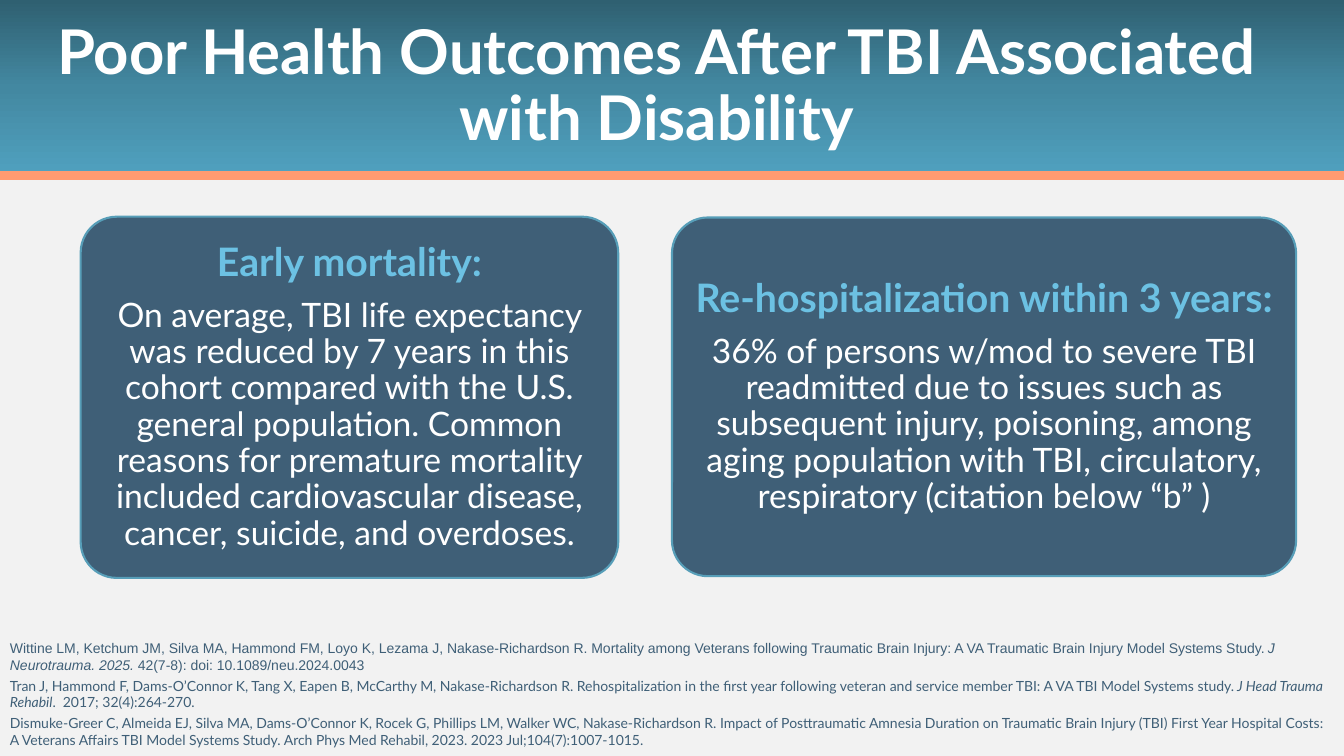
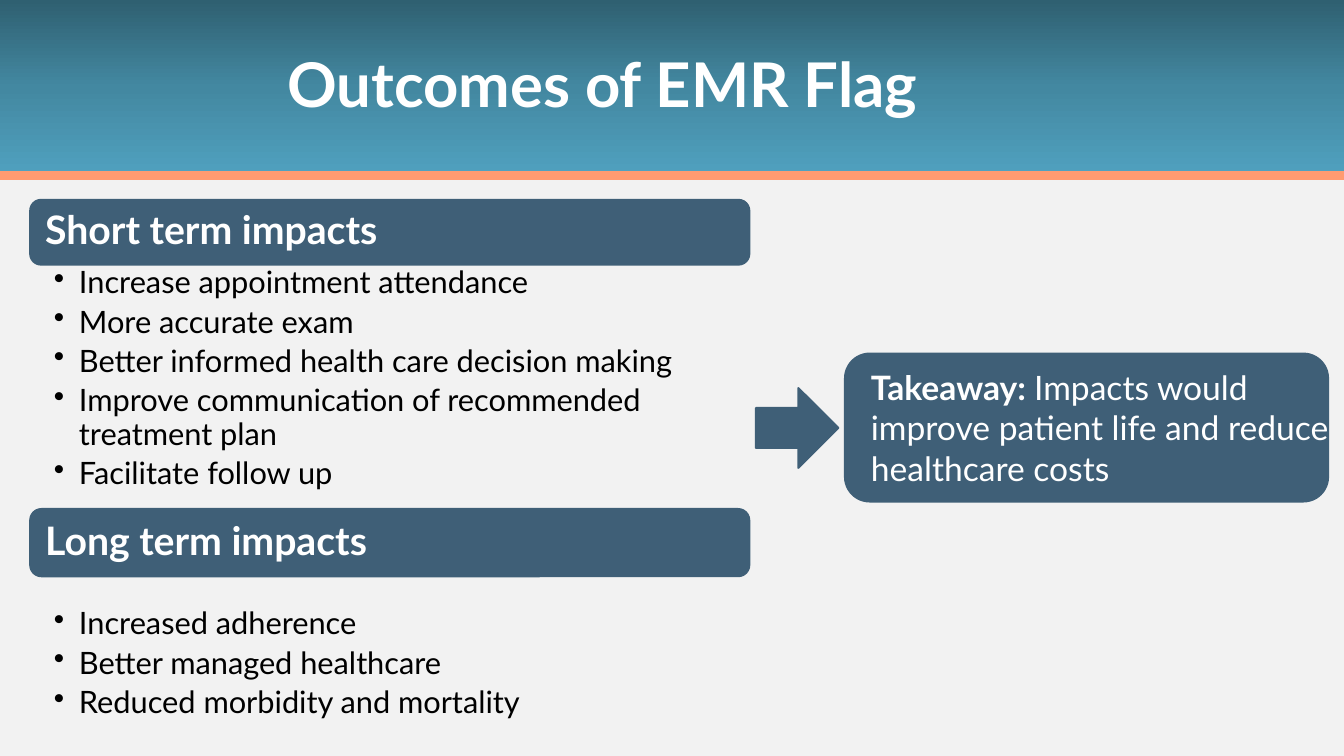
import copy

from pptx import Presentation
from pptx import util as u
from pptx.dml.color import RGBColor
from pptx.enum import shapes, text
from pptx.oxml import ns
from lxml import etree

COLORS = {
    "page": "F2F2F2", "white": "FFFFFF", "black": "000000",
    "navy": "3F5F77", "edge": "579EB8", "sky": "6CC1E3", "coral": "FF9B71",
    "band top": "2F6071", "band middle": "4388A1", "band bottom": "50A1BF",
}
RGB = {name: RGBColor.from_string(value) for name, value in COLORS.items()}

# Grid: 160 columns by 90 rows of square cells
deck = Presentation()
deck.slide_width, deck.slide_height = u.Inches(40 / 3), u.Inches(7.5)
CELL = deck.slide_width / 160
KIND = shapes.MSO_SHAPE
MIDDLE, TOP = text.MSO_ANCHOR.MIDDLE, text.MSO_ANCHOR.TOP


def add_box(page, area, kind=None, fill="navy", line=None, anchor=TOP,
            insets=(1.2, 0.6)):
    """Add a text box, or a filled shape if a kind is given; area in cells."""
    place = [u.Emu(round(cells * CELL)) for cells in area]
    if kind is None:
        box = page.shapes.add_textbox(*place)
    else:
        box = page.shapes.add_shape(kind, *place)
        box.shadow.inherit = False
        box.fill.solid()
        box.fill.fore_color.rgb = RGB[fill]
        if line:
            box.line.color.rgb = RGB[line]
            box.line.width = u.Pt(1.5)
        else:
            box.line.fill.background()
    frame = box.text_frame
    frame.word_wrap = True
    frame.vertical_anchor = anchor
    side, edge = (u.Emu(round(cells * CELL)) for cells in insets)
    frame.margin_left = frame.margin_right = side
    frame.margin_top = frame.margin_bottom = edge
    return box


def write(box, words, size=24, color="white", font="Lato", bold=False,
          align=text.PP_ALIGN.LEFT, spacing=0.9, before=0, after=0, bullet=False):
    """Add a paragraph; words is a string or a list of (string, style) spans."""
    frame = box.text_frame
    para = frame.paragraphs[0]
    if para.runs:
        para = frame.add_paragraph()
        para.space_before = u.Pt(before)
    para.alignment = align
    para.line_spacing = spacing
    para.space_after = u.Pt(after)
    if bullet:
        props = para._p.get_or_add_pPr()
        props.set("marL", str(u.Inches(0.25)))
        props.set("indent", str(-u.Inches(0.25)))
        etree.SubElement(props, ns.qn("a:buChar")).set("char", "•")
    for string, style in [(words, "")] if isinstance(words, str) else words:
        span = para.add_run()
        span.text = string
        span.font.name = font
        span.font.size = u.Pt(size)
        span.font.color.rgb = RGB[color]
        span.font.bold = bold or style == "bold"
        span.font.italic = style == "italic"


# Shared look: page colour, gradient band, coral rule, title
background = deck.slide_master.background.fill
background.solid()
background.fore_color.rgb = RGB["page"]

BAND_ROWS = 20.9
TITLES = [
    ("Poor Health Outcomes After TBI Associated with Disability", 149.2),
    ("Outcomes of EMR Flag", 136.3),
]
pages = []
for title, columns in TITLES:
    page = deck.slides.add_slide(deck.slide_layouts[6])
    band = add_box(page, (0, 0, 160, BAND_ROWS), KIND.RECTANGLE)
    band.fill.gradient()
    band.fill.gradient_angle = 270
    first, last = band.fill.gradient_stops
    first.color.rgb, last.color.rgb = RGB["band top"], RGB["band bottom"]
    stops = band._element.spPr.find(".//" + ns.qn("a:gsLst"))
    stops.insert(1, copy.deepcopy(stops[0]))
    middle = band.fill.gradient_stops[1]
    middle.position, middle.color.rgb = 0.5, RGB["band middle"]

    level = u.Emu(round(BAND_ROWS * CELL))
    rule = page.shapes.add_connector(
        shapes.MSO_CONNECTOR.STRAIGHT, 0, level, deck.slide_width, level)
    rule.line.color.rgb = RGB["coral"]
    rule.line.width = u.Pt(6)
    etree.SubElement(rule._element.spPr, ns.qn("a:effectLst"))

    heading = add_box(page, (3.6, 1.7, columns, 17.4), anchor=MIDDLE)
    write(heading, title, size=44, bold=True, align=text.PP_ALIGN.CENTER)
    pages.append(page)
health_page, flag_page = pages

# Slide 1: outcome cards
CARDS = [
    ((9.6, 25.8, 64, 43), "Early mortality:",
     "On average, TBI life expectancy was reduced by 7 years in this cohort "
     "compared with the U.S. general population. Common reasons for premature "
     "mortality included cardiovascular disease, cancer, suicide, and overdoses."),
    ((80, 25.9, 74.3, 42.7), "Re-hospitalization within 3 years:",
     "36% of persons w/mod to severe TBI readmitted due to issues such as "
     "subsequent injury, poisoning, among aging population with TBI, "
     "circulatory, respiratory (citation below “b” )"),
]
for area, label, finding in CARDS:
    card = add_box(health_page, area, KIND.ROUNDED_RECTANGLE, line="edge",
                   anchor=MIDDLE, insets=(0.7, 0.5))
    card.adjustments[0] = 0.1
    write(card, label, size=28, color="sky", bold=True,
          align=text.PP_ALIGN.CENTER, after=9.8)
    write(card, finding, align=text.PP_ALIGN.CENTER)

# Slide 1: references
REFERENCES = [
    ("Arial", [
        ("Wittine LM, Ketchum JM, Silva MA, Hammond FM, Loyo K, Lezama J, "
         "Nakase-Richardson R. Mortality among Veterans following Traumatic Brain "
         "Injury: A VA Traumatic Brain Injury Model Systems Study. ", ""),
        ("J Neurotrauma. 2025. ", "italic"),
        ("42(7-8): doi: 10.1089/neu.2024.0043", "")]),
    ("Lato", [
        ("Tran J, Hammond F, Dams-O’Connor K, Tang X, Eapen B, McCarthy M, "
         "Nakase-Richardson R. Rehospitalization in the first year following "
         "veteran and service member TBI: A VA TBI Model Systems study. ", ""),
        ("J Head Trauma Rehabil", "italic"),
        (".  2017; 32(4):264-270.", "")]),
    ("Lato", [
        ("Dismuke-Greer C, Almeida EJ, Silva MA, Dams-O’Connor K, Rocek G, "
         "Phillips LM, Walker WC, Nakase-Richardson R. Impact of Posttraumatic "
         "Amnesia Duration on Traumatic Brain Injury (TBI) First Year Hospital "
         "Costs: A Veterans Affairs TBI Model Systems Study. Arch Phys Med "
         "Rehabil, 2023. 2023 Jul;104(7):1007-1015.", "")]),
]
references = add_box(health_page, (0, 75.5, 160, 14.5))
for font, spans in REFERENCES:
    write(references, spans, size=10, color="navy", font=font, spacing=1, before=3)

# Slide 2: impact headers with their bullet lists, as (top, rows)
IMPACTS = [
    ("Short term impacts", (23.8, 7.7), (31.4, 25), [
        "Increase appointment attendance", "More accurate exam",
        "Better informed health care decision making",
        "Improve communication of recommended treatment plan",
        "Facilitate follow up"]),
    ("Long term impacts", (60.6, 8), (72, 12.6), [
        "Increased adherence", "Better managed healthcare",
        "Reduced morbidity and mortality"]),
]
for label, (top, rows), (list_top, list_rows), items in IMPACTS:
    header = add_box(flag_page, (3.6, top, 85.6, rows), KIND.ROUNDED_RECTANGLE,
                     line="navy", anchor=MIDDLE, insets=(1.4, 1.4))
    write(header, label, size=28, bold=True)
    listing = add_box(flag_page, (3.6, list_top, 85.6, list_rows), insets=(2.8, 0.4))
    for item in items:
        write(listing, item, size=22, color="black", after=4.4, bullet=True)

# Slide 2: arrow and takeaway
add_box(flag_page, (90, 46.2, 9.8, 9.5), KIND.RIGHT_ARROW, line="navy")
add_box(flag_page, (100.6, 42.1, 57.5, 17.6), KIND.ROUNDED_RECTANGLE, line="navy")
takeaway = add_box(flag_page, (102.5, 43.1, 57.5, 15.7))
write(takeaway, [
    ("Takeaway: ", "bold"),
    ("Impacts would improve patient life and reduce healthcare costs", "")], spacing=1)

deck.save("out.pptx")
